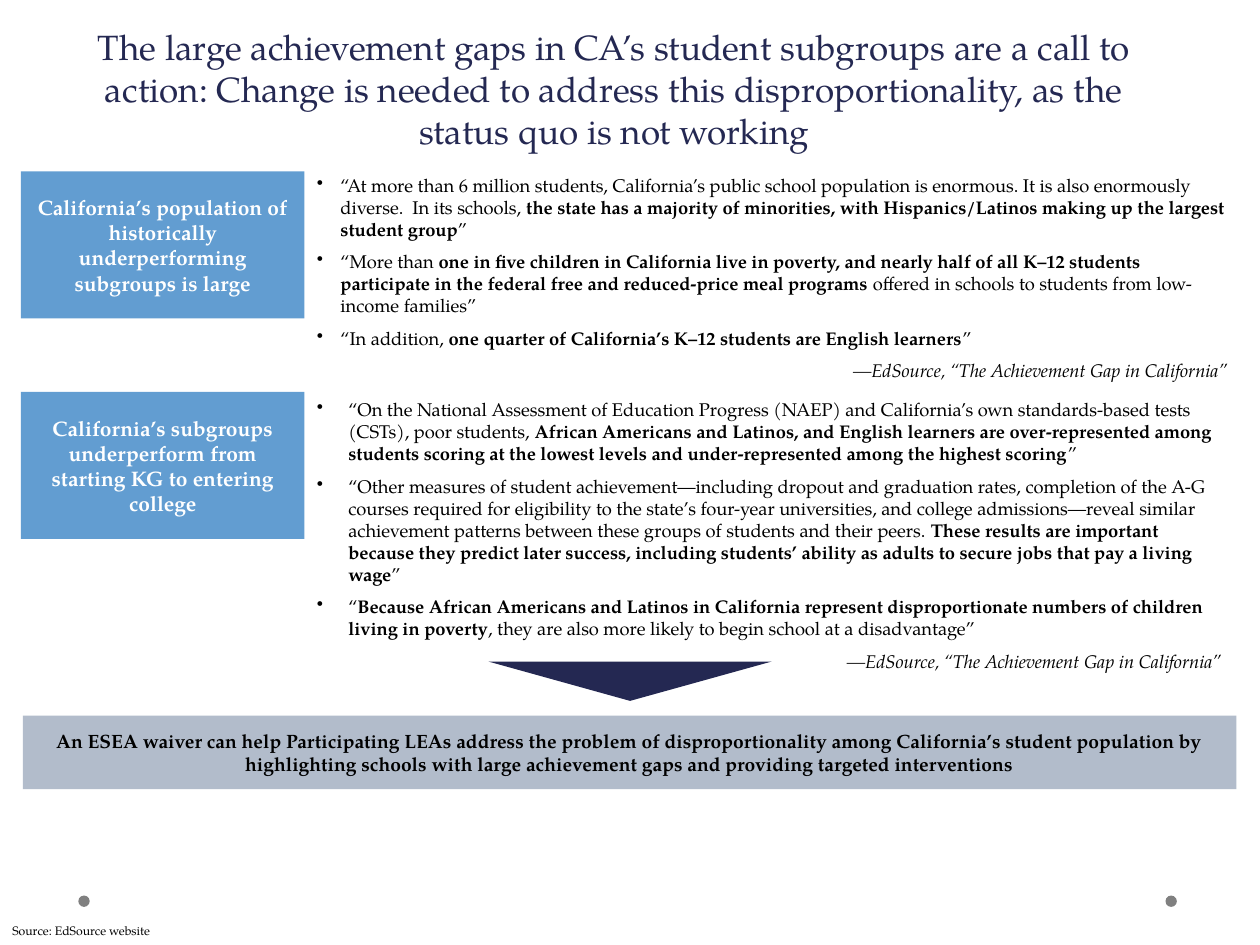
from pptx import Presentation
from pptx.dml.color import RGBColor
from pptx.enum.shapes import MSO_SHAPE
from pptx.enum.text import MSO_ANCHOR, PP_ALIGN
from pptx.oxml.xmlchemy import OxmlElement
from pptx.util import Pt

NAVY = RGBColor(0x24, 0x28, 0x52)
BLUE = RGBColor(0x62, 0x9D, 0xD1)
MIST = RGBColor(0xB2, 0xBC, 0xCB)
GRAY = RGBColor(0x80, 0x80, 0x80)
BLACK = RGBColor(0, 0, 0)
WHITE = RGBColor(255, 255, 255)

TITLE = (
    "The large achievement gaps in CA’s student subgroups are a call to action: "
    "Change is needed to address this disproportionality, as the status quo is not working"
)
CREDIT = "—EdSource, “The Achievement Gap in California”"
GROUPS = [
    (
        98, 95.75, 13.5, 3.6, 138.25,
        "California’s population of historically underperforming subgroups is large",
        [
            "“At more than 6 million students, California’s public school population is "
            "enormous. It is also enormously diverse.  In its schools, *the state has a "
            "majority of minorities, with Hispanics/Latinos making up the largest student "
            "group*”",
            "“More than *one in five children in California live in poverty, and nearly "
            "half of all K–12 students participate in the federal free and reduced-price "
            "meal programs *offered in schools to students from low-income families”",
            "“In addition, *one quarter of California’s K–12 students are English learners*”",
        ],
    ),
    (
        224, 224, 18, 7.2, 184.25,
        "California’s subgroups underperform from starting KG to entering college",
        [
            "“On the National Assessment of Education Progress (NAEP) and California’s own "
            "standards-based tests (CSTs), poor students, *African Americans and Latinos, "
            "and English learners are over-represented among students scoring at the lowest "
            "levels and under-represented among the highest scoring*”",
            "“Other measures of student achievement—including dropout and graduation rates, "
            "completion of the A-G courses required for eligibility to the state’s four-year "
            "universities, and college admissions—reveal similar achievement patterns between "
            "these groups of students and their peers. *These results are important because "
            "they predict later success, including students’ ability as adults to secure jobs "
            "that pay a living wage*”",
            "“*Because African Americans and Latinos in California represent disproportionate "
            "numbers of children living in poverty*, they are also more likely to begin school "
            "at a disadvantage”",
        ],
    ),
]
CLOSE = (
    "An ESEA waiver can help Participating LEAs address the problem of disproportionality "
    "among California’s student population by highlighting schools with large achievement "
    "gaps and providing targeted interventions"
)


class Page:
    face = "TeX Gyre Pagella"
    size = 10.5
    gap = 6

    def __init__(self, deck):
        self.slide = deck.slides.add_slide(deck.slide_layouts[5])

    def style(self, para, size, color, bold=False, italic=False):
        font = para.font
        font.name = self.face
        font.size = Pt(size)
        font.color.rgb = color
        font.bold = bold
        font.italic = italic

    def title(self, text, left, top, width, height):
        shape = self.slide.shapes.title
        shape.left, shape.top = Pt(left), Pt(top)
        shape.width, shape.height = Pt(width), Pt(height)
        frame = shape.text_frame
        frame.text = text
        frame.vertical_anchor = MSO_ANCHOR.BOTTOM
        para = frame.paragraphs[0]
        para.alignment = PP_ALIGN.CENTER
        self.style(para, 20, NAVY)

    def shape(self, kind, left, top, width, height, fill):
        shape = self.slide.shapes.add_shape(
            kind, Pt(left), Pt(top), Pt(width), Pt(height)
        )
        shape.shadow.inherit = False
        shape.fill.solid()
        shape.fill.fore_color.rgb = fill
        shape.line.fill.background()
        return shape

    def panel(self, text, left, top, width, height, fill, size, color):
        shape = self.shape(MSO_SHAPE.RECTANGLE, left, top, width, height, fill)
        frame = shape.text_frame
        frame.word_wrap = True
        frame.vertical_anchor = MSO_ANCHOR.MIDDLE
        para = frame.paragraphs[0]
        para.text = text
        para.alignment = PP_ALIGN.CENTER
        self.style(para, size, color, bold=True)

    def frame(self, left, top, width, height):
        box = self.slide.shapes.add_textbox(Pt(left), Pt(top), Pt(width), Pt(height))
        box.text_frame.word_wrap = True
        return box.text_frame

    def note(self, text, left, top, width, height):
        para = self.frame(left, top, width, height).paragraphs[0]
        para.text = text
        self.style(para, 7, BLACK)

    def bullet(self, para, indent):
        props = para._p.get_or_add_pPr()
        props.set("marL", str(Pt(indent)))
        props.set("indent", str(-Pt(indent)))
        mark = OxmlElement("a:buChar")
        mark.set("char", "•")
        props.append(mark)

    def quotes(self, items, credit, left, top, width, height, indent, inset):
        frame = self.frame(left, top, width, height)
        frame.margin_right = Pt(inset)
        para = frame.paragraphs[0]
        for item in items:
            self.bullet(para, indent)
            self.style(para, self.size, BLACK)
            for spot, part in enumerate(item.split("*")):
                run = para.add_run()
                run.text = part
                if spot % 2:
                    run.font.bold = True
            para = frame.add_paragraph()
            para.space_before = Pt(self.gap)
        para.text = credit
        para.alignment = PP_ALIGN.RIGHT
        self.style(para, self.size, BLACK, italic=True)


def main():
    deck = Presentation()
    deck.slide_width, deck.slide_height = Pt(720), Pt(540)
    page = Page(deck)
    for left in (44.75, 666):
        page.shape(MSO_SHAPE.OVAL, left, 511.75, 6.5, 6.5, GRAY)
    page.title(TITLE, 36, -36, 630, 126)
    page.note("Source: EdSource website", 0, 524.25, 720, 15.75)
    for top, start, indent, inset, height, label, items in GROUPS:
        page.quotes(items, CREDIT, 174, start, 531.5, height, indent, inset)
        page.panel(label, 12, top, 162, 84, BLUE, 12, WHITE)
    arrow = page.shape(MSO_SHAPE.ISOSCELES_TRIANGLE, 279, 378, 162, 22.5, NAVY)
    arrow.rotation = 180
    page.panel(CLOSE, 13, 409, 693.5, 42, MIST, 11, BLACK)
    deck.save("out.pptx")


if __name__ == "__main__":
    main()
